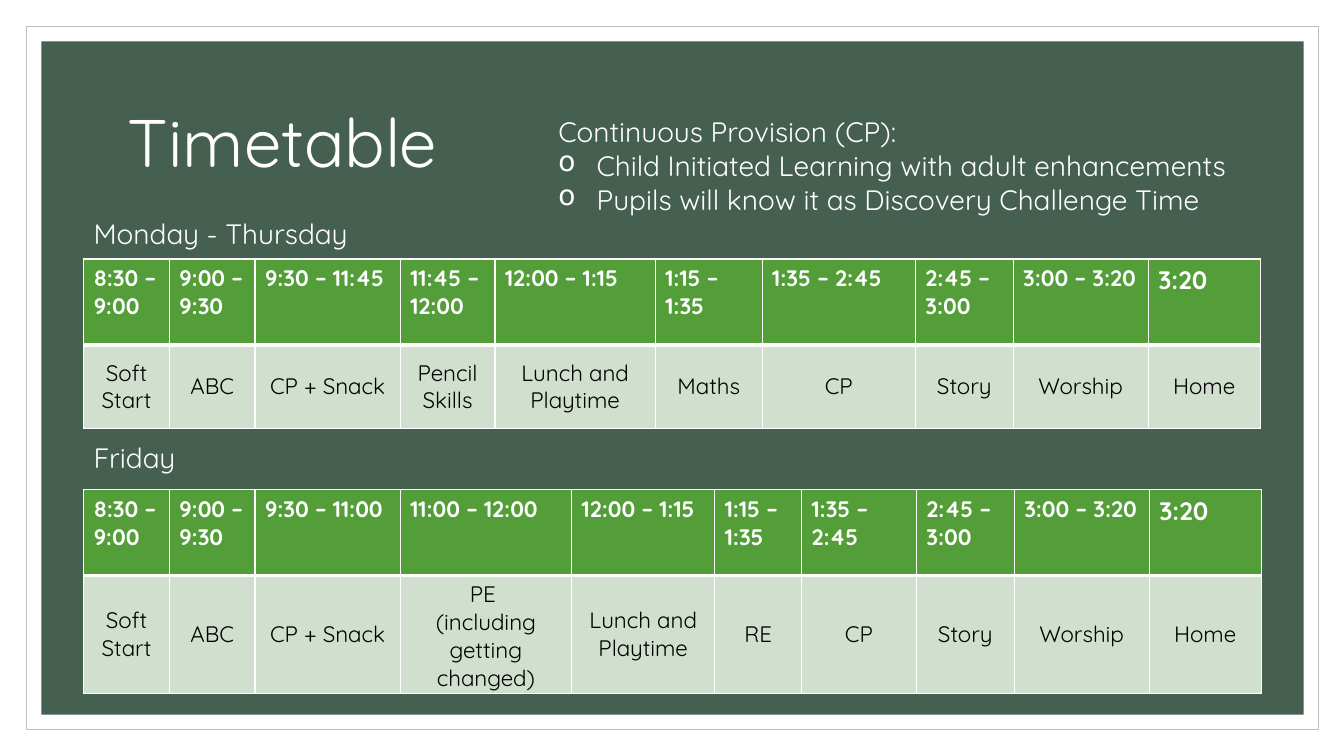
"""Build a weekly class timetable slide with two tables."""
from lxml.etree import SubElement as Sub
from pptx import Presentation
from pptx.dml.color import RGBColor as RGB
from pptx.enum.shapes import MSO_SHAPE as Kind
from pptx.enum.text import MSO_ANCHOR as Anchor, PP_ALIGN as Align
from pptx.oxml import parse_xml
from pptx.oxml.ns import nsdecls, qn
from pptx.util import Inches, Pt

WHITE = RGB(0xFF, 0xFF, 0xFF)
BLACK = RGB(0, 0, 0)
GREY = RGB(0xBF, 0xBF, 0xBF)
DARK = RGB(0x45, 0x5F, 0x51)
GREEN = RGB(0x54, 0x9E, 0x39)
PALE = RGB(0xD1, 0xDF, 0xCE)


def style(par, size, color, bold=False):
    font = par.runs[0].font
    font.color.rgb = color
    for key, val in {"name": "Quicksand", "size": Pt(size), "bold": bold}.items():
        setattr(font, key, val)


def border(cell, sides):
    props = cell._tc.get_or_add_tcPr()
    for spot, (side, width) in enumerate(sides.items()):
        props.insert(spot, parse_xml(
            f'<a:ln{side} {nsdecls("a")} w="{Pt(width)}"><a:solidFill>'
            f'<a:srgbClr val="{WHITE}"/></a:solidFill></a:ln{side}>'))


deck = Presentation()
deck.slide_width, deck.slide_height = Inches(13.33), Inches(7.5)
slide = deck.slides.add_slide(deck.slide_layouts[6])
shapes = slide.shapes

for inset, fill, line in [(0.26, WHITE, GREY), (0.41, DARK, None)]:
    panel = shapes.add_shape(
        Kind.RECTANGLE, Inches(inset), Inches(inset),
        Inches(13.34 - 2 * inset), Inches(7.5 - 2 * inset))
    panel.shadow.inherit = False
    panel.fill.solid()
    panel.fill.fore_color.rgb = fill
    if line:
        panel.line.color.rgb = line
        panel.line.width = Pt(0.5)
    else:
        panel.line.fill.background()

LABELS = [
    ((1.17, 0.7, 11, 1.5), 48, Anchor.MIDDLE, ["Timetable"]),
    ((5.44, 1.09, 7.43, 1.11), 20, Anchor.TOP, [
        "Continuous Provision (CP):",
        "Child Initiated Learning with adult enhancements",
        "Pupils will know it as Discovery Challenge Time"]),
    ((0.83, 2.1, 7.43, 0.44), 20, Anchor.TOP, ["Monday - Thursday"]),
    ((0.83, 4.32, 7.43, 0.44), 20, Anchor.TOP, ["Friday"]),
]
for place, size, anchor, lines in LABELS:
    frame = shapes.add_textbox(*map(Inches, place)).text_frame
    frame.word_wrap = True
    frame.vertical_anchor = anchor
    frame.text = "\n".join(lines)
    for par in frame.paragraphs:
        style(par, size, WHITE)
    for par in frame.paragraphs[1:]:
        props = par._p.get_or_add_pPr()
        props.set("marL", str(Inches(0.38)))
        props.set("indent", str(-Inches(0.38)))
        Sub(props, qn("a:buChar")).set("char", "o")
    if size == 48:
        frame.paragraphs[0].line_spacing = 0.9

START = [("8:30 – 9:00", "Soft Start", 0.85), ("9:00 – 9:30", "ABC", 0.85)]
END = [("2:45 – 3:00", "Story", 0.97), ("3:00 – 3:20", "Worship", 1.34),
       ("3:20", "Home", 1.11)]
WEEK = START + [
    ("9:30 – 11:45", "CP + Snack", 1.44), ("11:45 – 12:00", "Pencil Skills", 0.94),
    ("12:00 – 1:15", "Lunch and Playtime", 1.59), ("1:15 – 1:35", "Maths", 1.06),
    ("1:35 – 2:45", "CP", 1.52)] + END
FRIDAY = START + [
    ("9:30 – 11:00", "CP + Snack", 1.44),
    ("11:00 – 12:00", "PE \n(including getting changed)", 1.7),
    ("12:00 – 1:15", "Lunch and Playtime", 1.42), ("1:15 – 1:35", "RE", 0.86),
    ("1:35 – 2:45", "CP", 1.14)] + END

for top, low, plan in [(2.57, 0.83, WEEK), (4.86, 1.17, FRIDAY)]:
    table = shapes.add_table(
        2, len(plan), Inches(0.83), Inches(top),
        Inches(11.68), Inches(0.85 + low)).table
    table.rows[0].height = Inches(0.85)
    table.rows[1].height = Inches(low)
    for col, (time, task, width) in enumerate(plan):
        table.columns[col].width = Inches(width)
        head, body = table.cell(0, col), table.cell(1, col)
        for cell, text, fill in [(head, time, GREEN), (body, task, PALE)]:
            cell.text = text
            cell.fill.solid()
            cell.fill.fore_color.rgb = fill
        style(head.text_frame.paragraphs[0], 18 if time == "3:20" else 16, WHITE, True)
        body.vertical_anchor = Anchor.MIDDLE
        for par in body.text_frame.paragraphs:
            par.alignment = Align.CENTER
            style(par, 16, BLACK)
        border(head, {"L": 1, "R": 1, "T": 1, "B": 3})
        border(body, {"L": 1, "R": 1, "T": 3, "B": 1})

deck.save("out.pptx")
